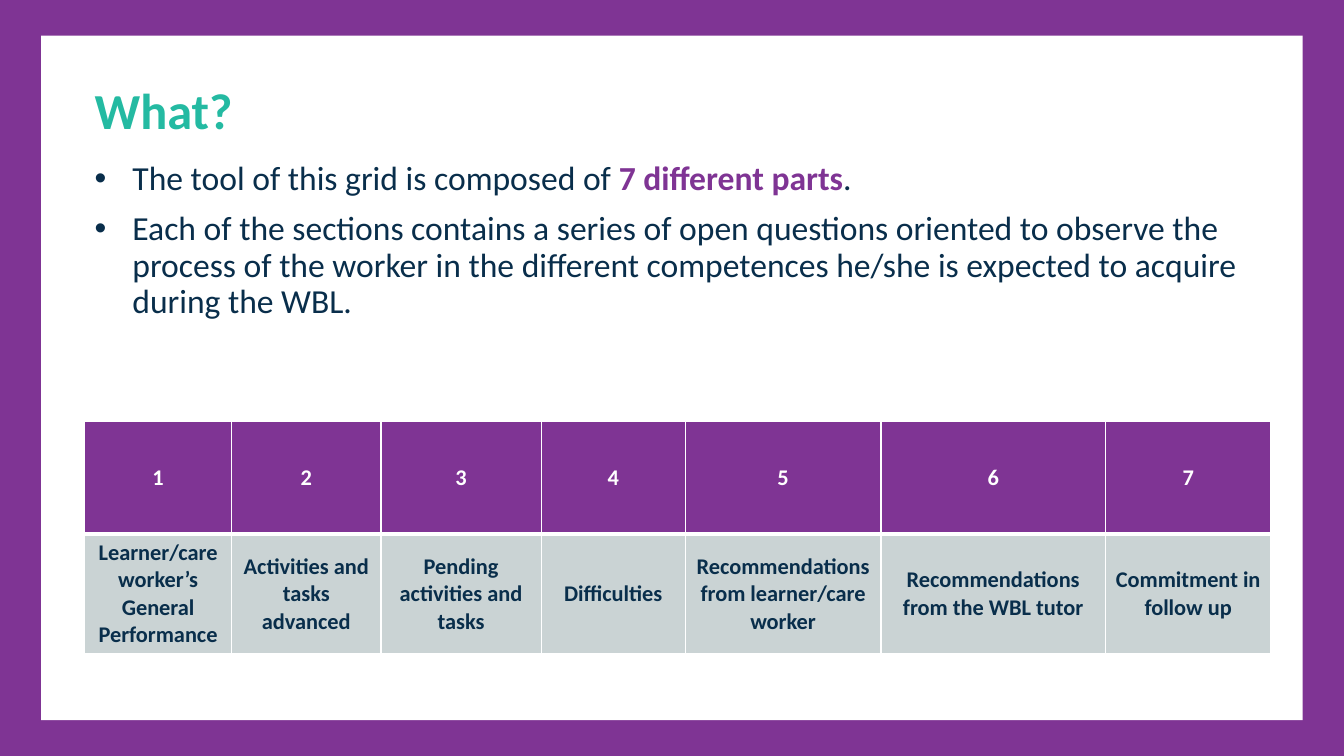
from lxml.etree import SubElement
from pptx import Presentation
from pptx.dml.color import RGBColor
from pptx.enum.shapes import MSO_SHAPE as Preset
from pptx.enum.text import MSO_ANCHOR as Anchor, MSO_AUTO_SIZE as AutoSize, PP_ALIGN as Align
from pptx.oxml.ns import qn
from pptx.util import Cm, Pt

PURPLE, NAVY, TEAL, GREY, WHITE = "7F3494", "092E4B", "24BAA2", "CAD3D4", "FFFFFF"
SLIDE_WIDTH, SLIDE_HEIGHT = 33.87, 19.05
MARGIN_LEFT = 2.13

BULLETS = [
    [("The tool of this grid is composed of ", {}),
     ("7 different parts", {"color": PURPLE, "bold": True}),
     (".", {})],
    [("Each of the sections contains a series of open questions oriented to observe "
      "the process of the worker in the different competences he/she is expected to "
      "acquire during the WBL.", {})],
]
PARTS = [
    ("Learner/care worker’s General Performance", 3.71),
    ("Activities and tasks advanced", 3.76),
    ("Pending activities and tasks", 4.04),
    ("Difficulties", 3.63),
    ("Recommendations from learner/care worker", 4.93),
    ("Recommendations from the WBL tutor", 5.66),
    ("Commitment in follow up", 4.17),
]
ROW_HEIGHTS = [2.84, 3]


def paint(fill, color):
    fill.solid()
    fill.fore_color.rgb = RGBColor.from_string(color)


def write(paragraph, text, size=24, color=NAVY, bold=False, align=Align.LEFT):
    paragraph.alignment = align
    run = paragraph.add_run()
    run.text = text
    run.font.name = "Calibri"
    run.font.size = Pt(size)
    run.font.bold = bold
    paint(run.font.fill, color)


def place(shape, box):
    shape.left, shape.top, shape.width, shape.height = map(Cm, box)
    frame = shape.text_frame
    frame.auto_size = AutoSize.NONE
    frame.vertical_anchor = Anchor.TOP
    return frame


def add_frame(slide, box, border_x, border_y):
    left, top, width, height = box
    panel = (left + border_x, top + border_y, width - 2 * border_x, height - 2 * border_y)
    for area, color in ((box, PURPLE), (panel, WHITE)):
        shape = slide.shapes.add_shape(Preset.RECTANGLE, *map(Cm, area))
        shape.shadow.inherit = False
        paint(shape.fill, color)
        shape.line.fill.background()
        slide.shapes.title.element.addprevious(shape.element)


def fill_title(slide, box):
    paragraph = place(slide.shapes.title, box).paragraphs[0]
    paragraph.line_spacing = 0.9
    write(paragraph, "What?", size=36, color=TEAL, bold=True)


def fill_bullets(slide, box):
    frame = place(slide.placeholders[1], box)
    for index, runs in enumerate(BULLETS):
        paragraph = frame.add_paragraph() if index else frame.paragraphs[0]
        paragraph.line_spacing = 0.9
        paragraph.space_before = Pt(10)
        for text, style in runs:
            write(paragraph, text, **style)


def add_borders(cell, bottom):
    properties = cell.fill._xPr
    widths = {"a:lnL": 1, "a:lnR": 1, "a:lnT": 1, "a:lnB": bottom}
    for position, (side, width) in enumerate(widths.items()):
        line = SubElement(properties, qn(side), w=str(Pt(width)))
        solid = SubElement(line, qn("a:solidFill"))
        SubElement(solid, qn("a:srgbClr"), val=WHITE)
        properties.insert(position, line)


def add_parts_table(slide, box):
    shape = slide.shapes.add_table(len(ROW_HEIGHTS), len(PARTS), *map(Cm, box))
    table = shape.table
    for row, height in zip(table.rows, ROW_HEIGHTS):
        row.height = Cm(height)
    for index, (name, width) in enumerate(PARTS):
        table.columns[index].width = Cm(width)
        styles = ((str(index + 1), WHITE, PURPLE, 3), (name, NAVY, GREY, 1))
        for row, (text, color, background, bottom) in enumerate(styles):
            cell = table.cell(row, index)
            cell.vertical_anchor = Anchor.MIDDLE
            paint(cell.fill, background)
            add_borders(cell, bottom)
            write(cell.text_frame.paragraphs[0], text, size=16, color=color,
                  bold=True, align=Align.CENTER)


def build_parts_slide(presentation):
    slide = presentation.slides.add_slide(presentation.slide_layouts[1])
    paint(slide.background.fill, WHITE)
    add_frame(slide, (0, 0, SLIDE_WIDTH, SLIDE_HEIGHT), 1.04, 0.9)
    fill_title(slide, (MARGIN_LEFT, 2.03, 29.44, 1.24))
    fill_bullets(slide, (MARGIN_LEFT, 3.94, 30.15, 6.02))
    table_width = sum(width for name, width in PARTS)
    add_parts_table(slide, (MARGIN_LEFT, 10.62, table_width, sum(ROW_HEIGHTS)))


def main():
    presentation = Presentation()
    presentation.slide_width = Cm(SLIDE_WIDTH)
    presentation.slide_height = Cm(SLIDE_HEIGHT)
    build_parts_slide(presentation)
    presentation.save("out.pptx")


if __name__ == "__main__":
    main()
